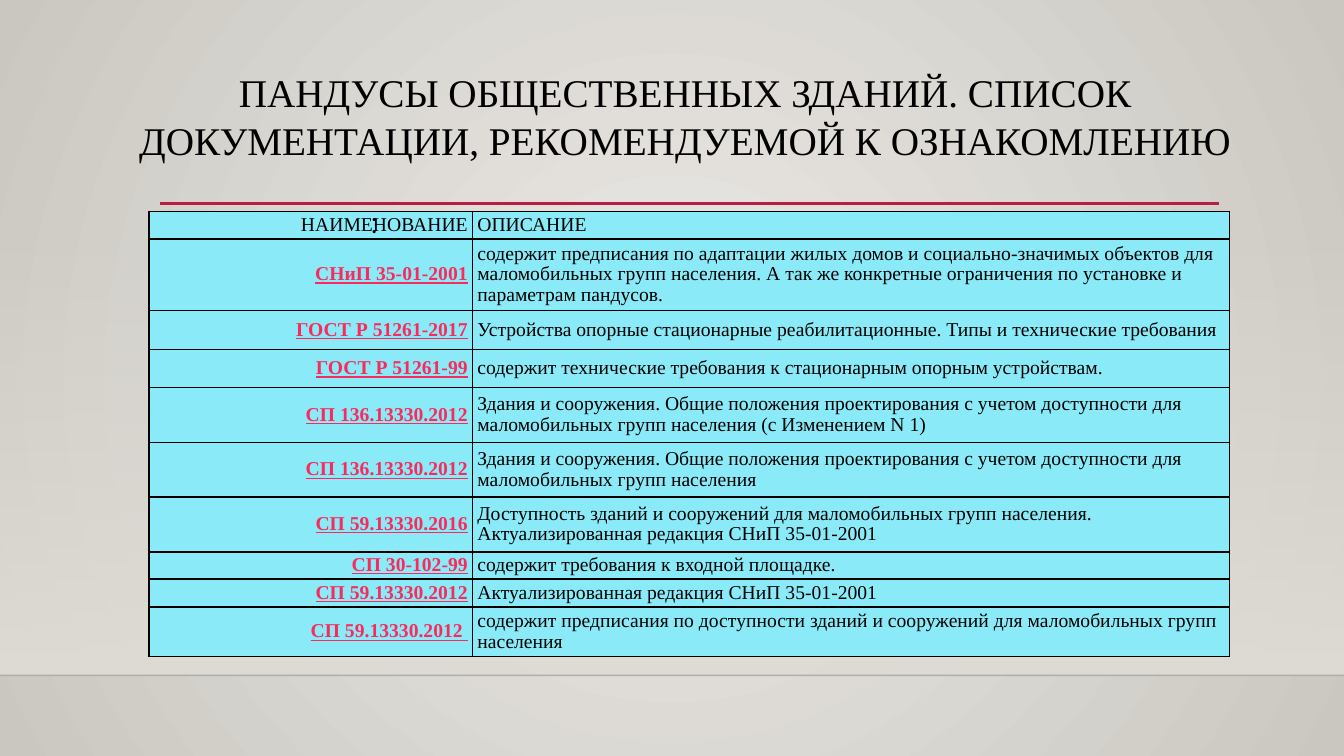
from lxml.etree import SubElement
from pptx import Presentation
from pptx.dml.color import RGBColor
from pptx.enum.shapes import MSO_CONNECTOR as Connector, MSO_SHAPE as Shape
from pptx.enum.text import MSO_ANCHOR as Anchor, PP_ALIGN as Align
from pptx.oxml import parse_xml
from pptx.oxml.ns import nsdecls, qn
from pptx.util import Cm, Pt

BLACK = RGBColor(0x00, 0x00, 0x00)
CRIMSON = RGBColor(0xB7, 0x1E, 0x42)
PINK = RGBColor(0xFA, 0x2B, 0x5C)
CYAN = RGBColor(0x8B, 0xEA, 0xF7)
SAND = RGBColor(0xDF, 0xDB, 0xD5)
LIGHT = RGBColor(0xEC, 0xEA, 0xE7)
GREY = RGBColor(0xCA, 0xC7, 0xC1)
SERIF = "Times New Roman"


def write(frame, text, size=14, font=SERIF, color=BLACK, bold=False,
          underline=False, align=Align.LEFT, spacing=1.0):
    para = frame.paragraphs[0]
    para.alignment = align
    para.line_spacing = spacing
    span = para.add_run()
    span.text = text
    span.font.size = Pt(size)
    span.font.name = font
    span.font.color.rgb = color
    span.font.bold = bold
    span.font.underline = underline


deck = Presentation()
deck.slide_width, deck.slide_height = Cm(33.87), Cm(19.05)
page = deck.slides.add_slide(deck.slide_layouts[6])

# Background: light centre, darker edges
backdrop = page.background.fill
backdrop.gradient()
for stop, color in zip(backdrop.gradient_stops, (LIGHT, GREY)):
    stop.color.rgb = color
gradient = page.background._cSld.find(".//" + qn("a:gradFill"))
gradient.replace(gradient.find(qn("a:lin")), parse_xml(
    f'<a:path {nsdecls("a")} path="circle">'
    '<a:fillToRect l="50000" t="50000" r="50000" b="50000"/></a:path>'))

# Wall that fades in towards the floor
wall = page.shapes.add_shape(Shape.RECTANGLE, 0, Cm(5.61), deck.slide_width, Cm(11.41))
wall.shadow.inherit = False
wall.line.fill.background()
wall.fill.gradient()
wall.fill.gradient_angle = 270
for stop in wall.fill.gradient_stops:
    stop.color.rgb = SAND
clear = wall._element.spPr.find(".//" + qn("a:srgbClr"))
SubElement(clear, qn("a:alpha"), val="0")

# Floor edge and the rule under the title
for left, right, y, color, width, opacity in (
        (0, 33.87, 17.02, BLACK, 1, 20),
        (4.04, 30.73, 5.13, CRIMSON, 2.5, 100)):
    rule = page.shapes.add_connector(Connector.STRAIGHT, Cm(left), Cm(y), Cm(right), Cm(y))
    rule.line.color.rgb = color
    rule.line.width = Pt(width)
    if opacity < 100:
        tone = rule._element.spPr.find(".//" + qn("a:srgbClr"))
        SubElement(tone, qn("a:alpha"), val=str(opacity * 1000))
    SubElement(rule._element.spPr, qn("a:effectLst"))

# Table of documents: row height, name, description
documents = [
    (0.69, "НАИМЕНОВАНИЕ", "ОПИСАНИЕ"),
    (1.8, "СНиП 35-01-2001",
     "содержит предписания по адаптации жилых домов и социально-значимых объектов "
     "для маломобильных групп населения. А так же конкретные ограничения по установке "
     "и параметрам пандусов."),
    (0.99, "ГОСТ Р 51261-2017",
     "Устройства опорные стационарные реабилитационные. Типы и технические требования"),
    (0.96, "ГОСТ Р 51261-99",
     "содержит технические требования к стационарным опорным устройствам."),
    (1.38, "СП 136.13330.2012",
     "Здания и сооружения. Общие положения проектирования с учетом доступности для "
     "маломобильных групп населения (с Изменением N 1)"),
    (1.38, "СП 136.13330.2012",
     "Здания и сооружения. Общие положения проектирования с учетом доступности для "
     "маломобильных групп населения"),
    (1.38, "СП 59.13330.2016",
     "Доступность зданий и сооружений для маломобильных групп населения. "
     "Актуализированная редакция СНиП 35-01-2001"),
    (0.69, "СП 30-102-99", "содержит требования к входной площадке."),
    (0.7, "СП 59.13330.2012", "Актуализированная редакция СНиП 35-01-2001"),
    (1.25, "СП 59.13330.2012 ",
     "содержит предписания по доступности зданий и сооружений для маломобильных "
     "групп населения"),
]
table = page.shapes.add_table(len(documents), 2, Cm(3.76), Cm(5.33), Cm(27.23), Cm(11.22)).table
table.columns[0].width, table.columns[1].width = Cm(8.15), Cm(19.08)
for index, (height, *texts) in enumerate(documents):
    table.rows[index].height = Cm(height)
    for column, text in enumerate(texts):
        cell = table.cell(index, column)
        cell.vertical_anchor = Anchor.MIDDLE
        cell.margin_left = cell.margin_right = Cm(0.12)
        cell.margin_top = cell.margin_bottom = Cm(0.07)
        cell.fill.solid()
        cell.fill.fore_color.rgb = CYAN
        is_code = index > 0 and column == 0
        write(cell.text_frame, text, color=PINK if is_code else BLACK,
              bold=is_code, underline=is_code, spacing=0.95,
              align=Align.LEFT if column else Align.RIGHT)
        for place, side in enumerate("LRTB"):
            cell._tc.tcPr.insert(place, parse_xml(
                f'<a:ln{side} {nsdecls("a")} w="{Pt(1.2)}"><a:solidFill>'
                f'<a:srgbClr val="{BLACK}"/></a:solidFill></a:ln{side}>'))

# Colon over the table heading
colon = page.shapes.add_textbox(Cm(9.35), Cm(4.93), Cm(1), Cm(2.77)).text_frame
colon.word_wrap = True
colon.margin_left = colon.margin_right = 0
colon.margin_top = Cm(0.25)
write(colon, ":", size=20, font="Roboto")

# Title
title = page.shapes.add_textbox(Cm(2.87), Cm(1.6), Cm(28.78), Cm(2.64)).text_frame
title.word_wrap = True
title.vertical_anchor = Anchor.MIDDLE
write(title, "ПАНДУСЫ ОБЩЕСТВЕННЫХ ЗДАНИЙ. СПИСОК ДОКУМЕНТАЦИИ, РЕКОМЕНДУЕМОЙ К ОЗНАКОМЛЕНИЮ",
      size=28, align=Align.CENTER)

deck.save("out.pptx")
